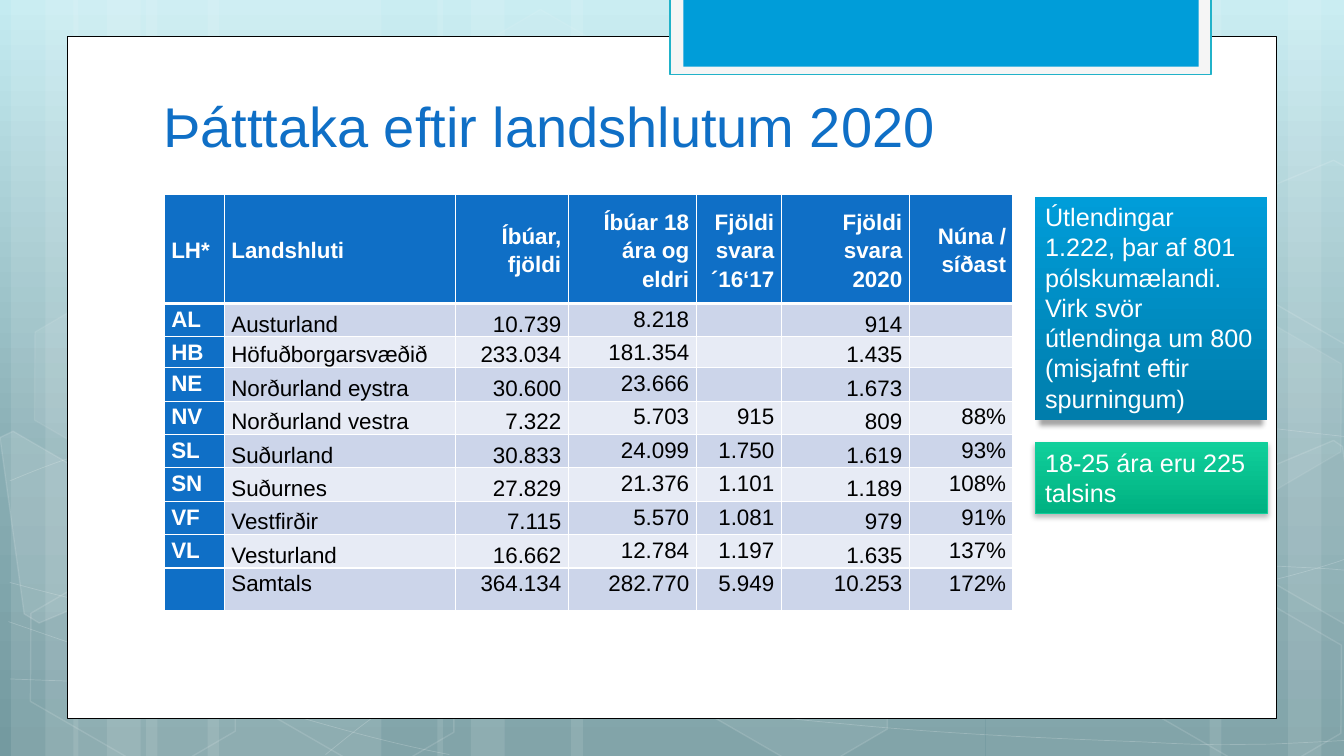
from copy import deepcopy
from itertools import product

from lxml.etree import SubElement
from pptx import Presentation
from pptx.dml.color import RGBColor
from pptx.enum.shapes import MSO_SHAPE
from pptx.enum.text import MSO_ANCHOR, MSO_AUTO_SIZE, PP_ALIGN
from pptx.oxml.ns import qn
from pptx.util import Pt

WHITE = RGBColor(0xFF, 0xFF, 0xFF)
BLACK = RGBColor(0, 0, 0)
NAVY = RGBColor(0x0F, 0x6F, 0xC6)
BLUE = RGBColor(0x00, 0x9D, 0xD9)
DEEP = RGBColor(0x00, 0x7D, 0xAC)
GREEN = RGBColor(0x10, 0xCF, 0x9B)
MOSS = RGBColor(0x00, 0xB1, 0x81)
TEAL = RGBColor(0x21, 0xB2, 0xC9)
PALE = RGBColor(0xF5, 0xF5, 0xF5)
BANDS = RGBColor(0xE7, 0xEB, 0xF5), RGBColor(0xCC, 0xD5, 0xEA)
SKY = [(0, RGBColor(0xC4, 0xEB, 0xF1)), (0.62, RGBColor(0x88, 0xAD, 0xB3)),
       (1, RGBColor(0x74, 0x9A, 0xA0))]
FONT = "Arial"

STRIPS = [(104.4, 168), (8, 48), (32.4, 80), (148.4, 168), (52.4, 48), (76.4, 80),
          (704.4, 168), (920, 48), (864, 80), (408, 296), (312.4, 48), (336.4, 80)]
CURVES = [
    [(7, 485), (59, 487), (111, 489), (183, 488), (255, 487.5), (343.5, 486), (439, 479),
     (536, 472), (672, 458), (760, 444), (848, 431), (938, 409), (967, 397)],
    [(7, 343.5), (34.5, 332), (62, 321), (117, 310), (171, 299.5), (248.5, 283.5),
     (333.5, 278.5), (419, 273.5), (522, 273), (628, 278.5), (734, 284.5),
     (909.5, 306.5), (967, 312.5)],
    [(6, 444), (121.5, 484), (237.5, 523.5), (321, 539)],
    [(7, 416), (36.5, 424), (67, 432), (123, 443.5), (178.5, 454.5), (262, 472),
     (342, 484.5), (422, 497), (523.5, 510), (602.5, 517), (682.5, 525), (767.5, 528),
     (818.5, 530), (869, 533), (882, 531.5), (907, 531.5), (931.5, 530.5),
     (949.5, 529.5), (967, 528.5)],
    [(232.5, 539), (250, 525), (266.5, 510.5), (290, 497.5), (313, 484.5), (345.5, 470),
     (372, 460), (399, 450), (415.5, 445.5), (450.5, 438.5), (486, 431.5), (551, 421),
     (584, 416), (618, 411), (623, 411), (653, 409.5), (682.5, 407.5), (729.5, 405.5),
     (762.5, 404.5), (795.5, 404), (851, 404.5), (851, 404.5), (872, 404.5),
     (893, 404.5), (914.5, 404.5), (932.5, 405.5), (948, 406), (957, 407),
     (965.5, 407.5), (962.5, 407), (965.5, 407.5)],
]
HEXES = [(320.4, 26, 4, 8), (476.6, 424, 6, 12), (10.8, 425.5, 0, 12), (13.7, 224.6, 7, 8),
         (167, 426.2, 0, 12), (800.6, 427, 0, 12), (800.6, 226, 7, 8)]
CUTS = [
    ([(0, 312.5), (9.4, 308), (82.8, 350.6), (91.4, 418.3), (28, 445), (17.3, 438.5)], 10),
    ([(889, 341.3), (952.6, 314.6), (959, 319), (977, 450), (971.3, 452), (897.8, 409.7)], 4),
    ([(889, 141), (952.6, 114.5), (960.5, 118.8), (977, 249), (971.3, 252), (897.8, 209.5)], 0),
]
COLS = [42.9, 165, 80.6, 91.4, 60.8, 91.4, 74.2]
ROWS = [77.8, 23.8, 21.7] + [23.85] * 6 + [30.6]
DATA = [
    ["LH*", "Landshluti", "Íbúar, fjöldi", "Íbúar 18 ára og eldri",
     "Fjöldi svara ´16‘17", "Fjöldi svara 2020", "Núna / síðast"],
    ["AL", "Austurland", "10.739", "8.218", "", "914", ""],
    ["HB", "Höfuðborgarsvæðið", "233.034", "181.354", "", "1.435", ""],
    ["NE", "Norðurland eystra", "30.600", "23.666", "", "1.673", ""],
    ["NV", "Norðurland vestra", "7.322", "5.703", "915", "809", "88%"],
    ["SL", "Suðurland", "30.833", "24.099", "1.750", "1.619", "93%"],
    ["SN", "Suðurnes", "27.829", "21.376", "1.101", "1.189", "108%"],
    ["VF", "Vestfirðir", "7.115", "5.570", "1.081", "979", "91%"],
    ["VL", "Vesturland", "16.662", "12.784", "1.197", "1.635", "137%"],
    ["", "Samtals", "364.134", "282.770", "5.949", "10.253", "172%"],
]


def shade(owner, fill, stops):
    """Fill from top to bottom through the given colour stops."""
    fill.gradient()
    fill.gradient_angle = 270
    group = owner.find(".//" + qn("a:gsLst"))
    while len(group) < len(stops):
        group.append(deepcopy(group[-1]))
    for mark, (place, tone) in zip(fill.gradient_stops, stops):
        mark.position = place
        mark.color.rgb = tone


def paint(shape, tone=None, alpha=100, edge=None, width=1, clear=100):
    """Give a shape a plain fill and line, each with its opacity."""
    shape.shadow.inherit = False
    for fill, hue, part, level in ((shape.fill, tone, "a:solidFill", alpha),
                                   (shape.line.fill, edge, "a:ln/a:solidFill", clear)):
        if hue is None or level == 0:
            fill.background()
            continue
        fill.solid()
        fill.fore_color.rgb = hue
        if level < 100:
            route = "/".join(qn(name) for name in part.split("/"))
            mark = shape.element.spPr.find(route)[0]
            SubElement(mark, qn("a:alpha"), val=str(level * 1000))
    if edge is not None:
        shape.line.width = Pt(width)


def block(slide, box, kind=MSO_SHAPE.RECTANGLE):
    """Add a preset shape at left, top, width, height."""
    return slide.shapes.add_shape(kind, *map(Pt, box))


def outline(slide, points, close=False):
    """Add a freeform through the points."""
    points = [tuple(map(Pt, point)) for point in points]
    maker = slide.shapes.build_freeform(*points[0])
    maker.add_line_segments(points[1:], close=close)
    return maker.convert_to_shape()


def curve(slide, knots):
    """Add an open chain of cubic curves."""
    shape = outline(slide, knots[::3])
    for index, line in enumerate(list(shape.element.iter(qn("a:lnTo")))):
        line.tag = qn("a:cubicBezTo")
        pulls = knots[3 * index + 1:3 * index + 3]
        for place, (x, y) in enumerate(pulls):
            point = SubElement(line, qn("a:pt"), x=str(Pt(x) - shape.left),
                               y=str(Pt(y) - shape.top))
            line.insert(place, point)
    return shape


def style(para, size, tone, align=PP_ALIGN.LEFT, bold=False):
    """Format a paragraph and its runs."""
    para.alignment = align
    for run in para.runs:
        font = run.font
        font.name, font.size, font.bold = FONT, Pt(size), bold
        font.color.rgb = tone


def scene(slide):
    """Draw the sky, strips, curves, hexagons and white panel."""
    shade(slide.element, slide.background.fill, SKY)
    for left, width in STRIPS:
        paint(block(slide, (left, 0, width, 540)), WHITE, 10)
    for knots in CURVES:
        paint(curve(slide, knots), edge=WHITE, width=0.5, clear=20)
    for left, top, alpha, clear in HEXES:
        shape = block(slide, (left, top, 168.5, 109.4), MSO_SHAPE.HEXAGON)
        shape.adjustments[0] = 0.285
        shape.rotation = 30
        paint(shape, WHITE, alpha, WHITE, 1, clear)
    for points, alpha in CUTS:
        paint(outline(slide, points, True), WHITE, alpha, WHITE, 1, 12)
    paint(block(slide, (48, 26, 864, 487)), WHITE, edge=BLACK, width=0.5)
    paint(block(slide, (478.8, -1.4, 386, 54.7)), PALE, edge=TEAL, width=1.25)
    paint(block(slide, (488.2, -1.4, 368, 49)), BLUE)


def head(slide, text):
    """Place the title in front of the panel."""
    title = slide.shapes.title
    slide.shapes.element.append(title.element)
    title.left, title.top, title.width, title.height = map(Pt, (109.4, 55.4, 737.3, 61.9))
    frame = title.text_frame
    frame.text = text
    frame.auto_size = MSO_AUTO_SIZE.NONE
    frame.vertical_anchor = MSO_ANCHOR.BOTTOM
    style(frame.paragraphs[0], 40, NAVY)


def note(slide, box, text, tones, edge, glow):
    """Add a shaded note with a soft shadow."""
    shape = block(slide, box)
    paint(shape, edge=edge, width=0.75)
    shade(shape.element, shape.fill, list(enumerate(tones)))
    alpha, blur, drop, wide = glow
    cast = SubElement(shape.element.spPr.find(qn("a:effectLst")), qn("a:outerShdw"),
                      blurRad=str(Pt(blur)), dist=str(Pt(drop)), dir="5400000",
                      sx=str(wide * 1000), rotWithShape="0")
    mark = SubElement(cast, qn("a:srgbClr"), val=str(BLACK))
    SubElement(mark, qn("a:alpha"), val=str(alpha * 1000))
    frame = shape.text_frame
    frame.text = text
    frame.word_wrap = True
    frame.auto_size = MSO_AUTO_SIZE.SHAPE_TO_FIT_TEXT
    frame.vertical_anchor = MSO_ANCHOR.TOP
    for para in frame.paragraphs:
        style(para, 18, WHITE)


def border(cell, row):
    """Draw white cell borders, thick under the header."""
    for side in "LRTB":
        thick = (row, side) in ((0, "B"), (1, "T"))
        line = SubElement(cell._tc.get_or_add_tcPr(), qn("a:ln" + side),
                          w=str(Pt(3 if thick else 1)))
        SubElement(SubElement(line, qn("a:solidFill")), qn("a:srgbClr"), val=str(WHITE))


def grid(slide):
    """Add the table of regions."""
    table = slide.shapes.add_table(len(ROWS), len(COLS), Pt(117.4), Pt(139),
                                   Pt(sum(COLS)), Pt(sum(ROWS))).table
    for part, width in zip(table.columns, COLS):
        part.width = Pt(width)
    for part, height in zip(table.rows, ROWS):
        part.height = Pt(height)
    for row, col in product(range(len(ROWS)), range(len(COLS))):
        cell = table.cell(row, col)
        cell.text = DATA[row][col]
        cell.margin_left = cell.margin_right = Pt(5)
        cell.margin_top = cell.margin_bottom = 0
        low = col in (1, 2, 5) and row < len(ROWS) - 1
        cell.vertical_anchor = (MSO_ANCHOR.MIDDLE if row == 0 else
                                MSO_ANCHOR.BOTTOM if low else MSO_ANCHOR.TOP)
        border(cell, row)
        key = row == 0 or col == 0
        cell.fill.solid()
        cell.fill.fore_color.rgb = NAVY if key else BANDS[row % 2]
        para = cell.text_frame.paragraphs[0]
        para.line_spacing = 1.15
        align = (PP_ALIGN.RIGHT if col > 1 else
                 PP_ALIGN.LEFT if (row, col) == (0, 1) else PP_ALIGN.JUSTIFY)
        style(para, 16, WHITE if key else BLACK, align, key)


def main():
    """Build and save the slide."""
    deck = Presentation()
    deck.slide_width, deck.slide_height = Pt(960), Pt(540)
    slide = deck.slides.add_slide(deck.slide_layouts[5])
    scene(slide)
    head(slide, "Þátttaka eftir landshlutum 2020")
    note(slide, (739.4, 316, 166, 51), "18-25 ára eru 225 talsins",
         (GREEN, MOSS), GREEN, (28, 4, 2, 100))
    note(slide, (739.4, 140.4, 165.6, 160), "Útlendingar\n1.222, þar af 801 pólskumælandi. "
         "Virk svör útlendinga um 800 (misjafnt eftir spurningum)",
         (BLUE, DEEP), None, (34, 3.5, 4, 96))
    grid(slide)
    deck.save("out.pptx")


if __name__ == "__main__":
    main()
